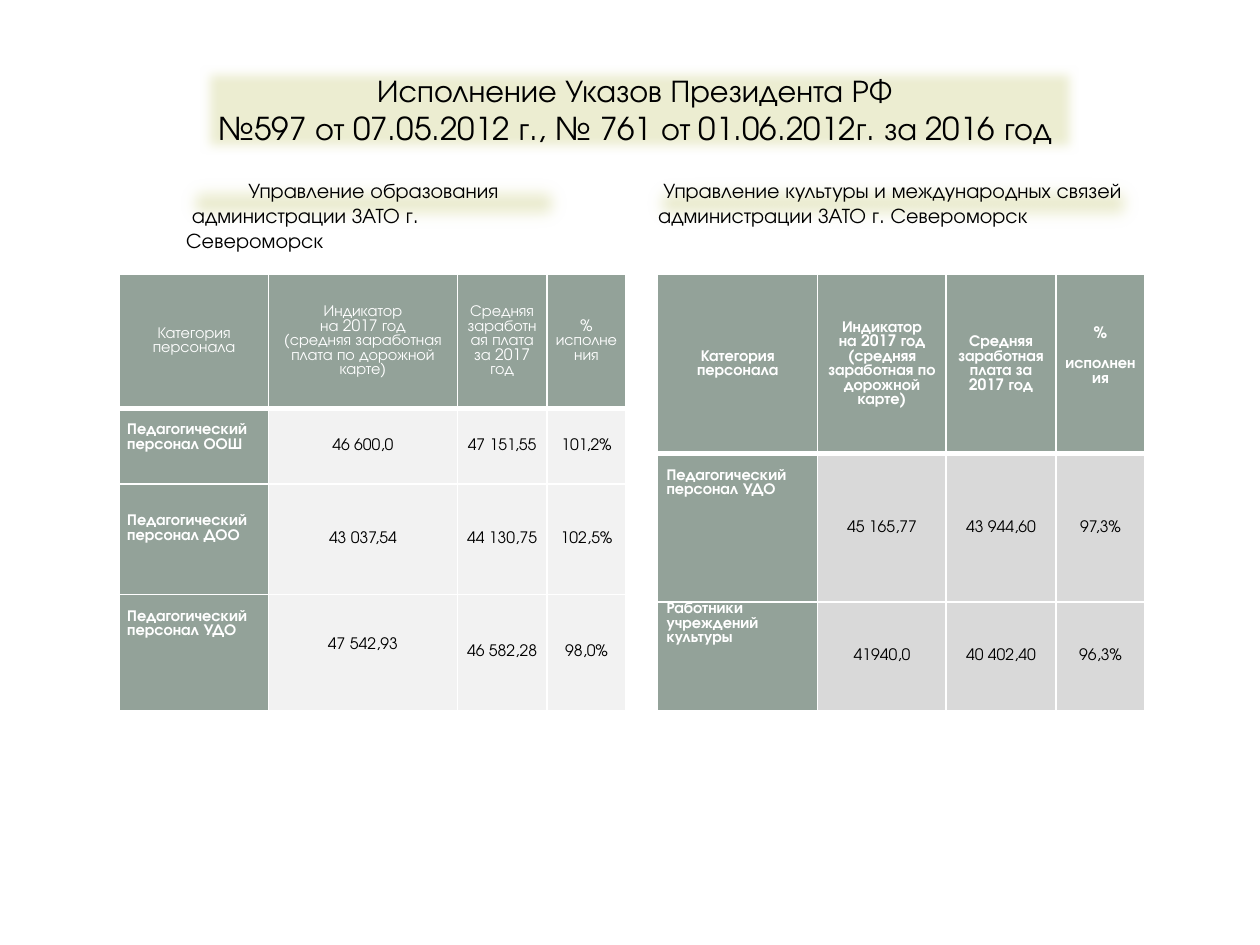
from dataclasses import dataclass

from lxml import etree
from pptx import Presentation
from pptx.dml.color import RGBColor as Color
from pptx.enum.shapes import MSO_SHAPE as Shape
from pptx.enum.text import MSO_ANCHOR as Anchor, MSO_AUTO_SIZE as AutoSize, PP_ALIGN as Align
from pptx.oxml import parse_xml
from pptx.oxml.ns import nsdecls, qn
from pptx.util import Inches, Pt


@dataclass(frozen=True)
class Theme:
    font: str = "TeX Gyre Adventor"
    title: float = 18
    subtitle: float = 12
    cell: float = 9
    band: str = "ECEDD1"
    head: str = "93A299"
    light: str = "F2F2F2"
    grey: str = "D9D9D9"
    white: str = "FFFFFF"
    black: str = "000000"


theme = Theme()


def write(frame, text, size, color, align, bold=False):
    """Fill a text frame, one paragraph per line of text."""
    frame.text = text
    frame.word_wrap = True
    for paragraph in frame.paragraphs:
        paragraph.alignment = align
        font = paragraph.font
        font.name, font.size, font.bold = theme.font, Pt(size), bold
        font.color.rgb = Color.from_string(color)


def soften(shape, radius):
    """Give a shape the pale fill and a soft edge."""
    shape.fill.solid()
    shape.fill.fore_color.rgb = Color.from_string(theme.band)
    shape.line.fill.background()
    shape.shadow.inherit = False
    effects = shape._element.spPr.find(qn("a:effectLst"))
    etree.SubElement(effects, qn("a:softEdge"), rad=str(Pt(radius)))


presentation = Presentation()
presentation.slide_width, presentation.slide_height = Inches(10), Inches(7.5)
slide = presentation.slides.add_slide(presentation.slide_layouts[5])
shapes = slide.shapes

# Square grid: 100 columns by 75 rows
unit = presentation.slide_width / 100

# White rounded panel behind everything
panel = shapes.add_shape(
    Shape.ROUNDED_RECTANGLE, *(int(n * unit) for n in (1, 1.1, 98, 72.9)))
panel.adjustments[0] = 0.02
panel.shadow.inherit = False
panel.fill.solid()
panel.fill.fore_color.rgb = Color.from_string(theme.white)
panel.line.fill.background()
shapes.title._element.addprevious(panel._element)

# Title
title = shapes.title
title.left, title.top, title.width, title.height = (
    int(n * unit) for n in (15.9, 5.2, 69.7, 7.1))
soften(title, 6)
frame = title.text_frame
write(frame, "Исполнение Указов Президента РФ\n"
      "№597 от 07.05.2012 г., № 761 от 01.06.2012г. за 2016 год",
      theme.title, theme.black, Align.CENTER)
frame.auto_size = AutoSize.NONE
frame.vertical_anchor = Anchor.MIDDLE
frame.margin_left, frame.margin_right = int(0.5 * unit), int(1.9 * unit)
frame.margin_top, frame.margin_bottom = int(0.4 * unit), int(0.6 * unit)
frame.paragraphs[0]._p.get_or_add_pPr().set("marL", str(int(0.7 * unit)))

# Subtitles: left edge, width, department
subtitles = [
    (13.8, 31.7, "Управление образования"),
    (50.8, 40.1, "Управление культуры и международных связей"),
]
for left, width, department in subtitles:
    subtitle = shapes.add_shape(
        Shape.RECTANGLE, *(int(n * unit) for n in (left, 13.6, width, 5)))
    soften(subtitle, 10)
    frame = subtitle.text_frame
    write(frame, f"{department}\nадминистрации ЗАТО г. Североморск",
          theme.subtitle, theme.black, Align.CENTER)
    frame.vertical_anchor = Anchor.TOP
    address = frame.paragraphs[1]
    address.alignment = Align.LEFT
    address._p.get_or_add_pPr().set("indent", str(int(0.45 * unit)))

# Tables; "padding" holds the top and bottom margins of single cells
tables = [
    dict(
        left=9.5, columns=(11.8, 15, 7.1, 6.3), rows=(10.6, 6, 8.8, 9.2),
        margin=0.6, bold_head=False, fill=theme.light,
        padding={(1, 0): (1.2, 0), (2, 0): (2.4, 0), (3, 0): (1.2, 0), (3, 1): (0, 1.2)},
        cells=[
            ("Категория персонала",
             "Индикатор\nна 2017 год\n(средняя заработная плата по дорожной карте)",
             "Средняя заработная плата за 2017 год", "% исполнения"),
            ("Педагогический персонал ООШ", "46 600,0", "47 151,55", "101,2%"),
            ("Педагогический персонал ДОО", "43 037,54", "44 130,75", "102,5%"),
            ("Педагогический персонал УДО", "47 542,93", "46 582,28", "98,0%"),
        ]),
    dict(
        left=52.2, columns=(12.7, 10.2, 8.7, 7.1), rows=(14.2, 11.8, 8.6),
        margin=0.7, bold_head=True, fill=theme.grey,
        padding={(0, 3): (0, 1.2), (1, 0): (1.2, 0)},
        cells=[
            ("Категория персонала",
             "Индикатор\nна 2017 год\n(средняя заработная по дорожной карте)",
             "Средняя заработная плата за\n2017 год", "%\nисполнения"),
            ("Педагогический персонал УДО", "45 165,77", "43 944,60", "97,3%"),
            ("Работники учреждений культуры", "41940,0", "40 402,40", "96,3%"),
        ]),
]
for data in tables:
    columns, rows = data["columns"], data["rows"]
    table = shapes.add_table(
        len(rows), len(columns),
        *(int(n * unit) for n in (data["left"], 21.8, sum(columns), sum(rows)))).table
    table.first_row = table.horz_banding = False
    for column, width in zip(table.columns, columns):
        column.width = int(width * unit)
    for r, (height, texts) in enumerate(zip(rows, data["cells"])):
        table.rows[r].height = int(height * unit)
        for c, text in enumerate(texts):
            cell = table.cell(r, c)
            header, label = r == 0, c == 0
            dark, side = header or label, label and not header
            write(cell.text_frame, text, theme.cell,
                  theme.white if dark else theme.black,
                  Align.LEFT if side else Align.CENTER,
                  bold=data["bold_head"] if header else label)
            cell.vertical_anchor = Anchor.TOP if side else Anchor.MIDDLE
            cell.margin_left = cell.margin_right = int(data["margin"] * unit)
            cell.margin_top, cell.margin_bottom = (
                int(n * unit) for n in data["padding"].get((r, c), (0, 0)))
            cell.fill.solid()
            cell.fill.fore_color.rgb = Color.from_string(theme.head if dark else data["fill"])
            # White borders, thicker under the header
            properties = cell._tc.get_or_add_tcPr()
            thick = {"B"} if header else {"T"} if r == 1 else set()
            for position, edge in enumerate("LRTB"):
                properties.insert(position, parse_xml(
                    f'<a:ln{edge} {nsdecls("a")} w="{Pt(3 if edge in thick else 1)}"><a:solidFill>'
                    f'<a:srgbClr val="{theme.white}"/></a:solidFill></a:ln{edge}>'))

# Gap under the percent sign in the second table's header
table.cell(0, 3).text_frame.paragraphs[1].space_before = Pt(9)

presentation.save("out.pptx")
